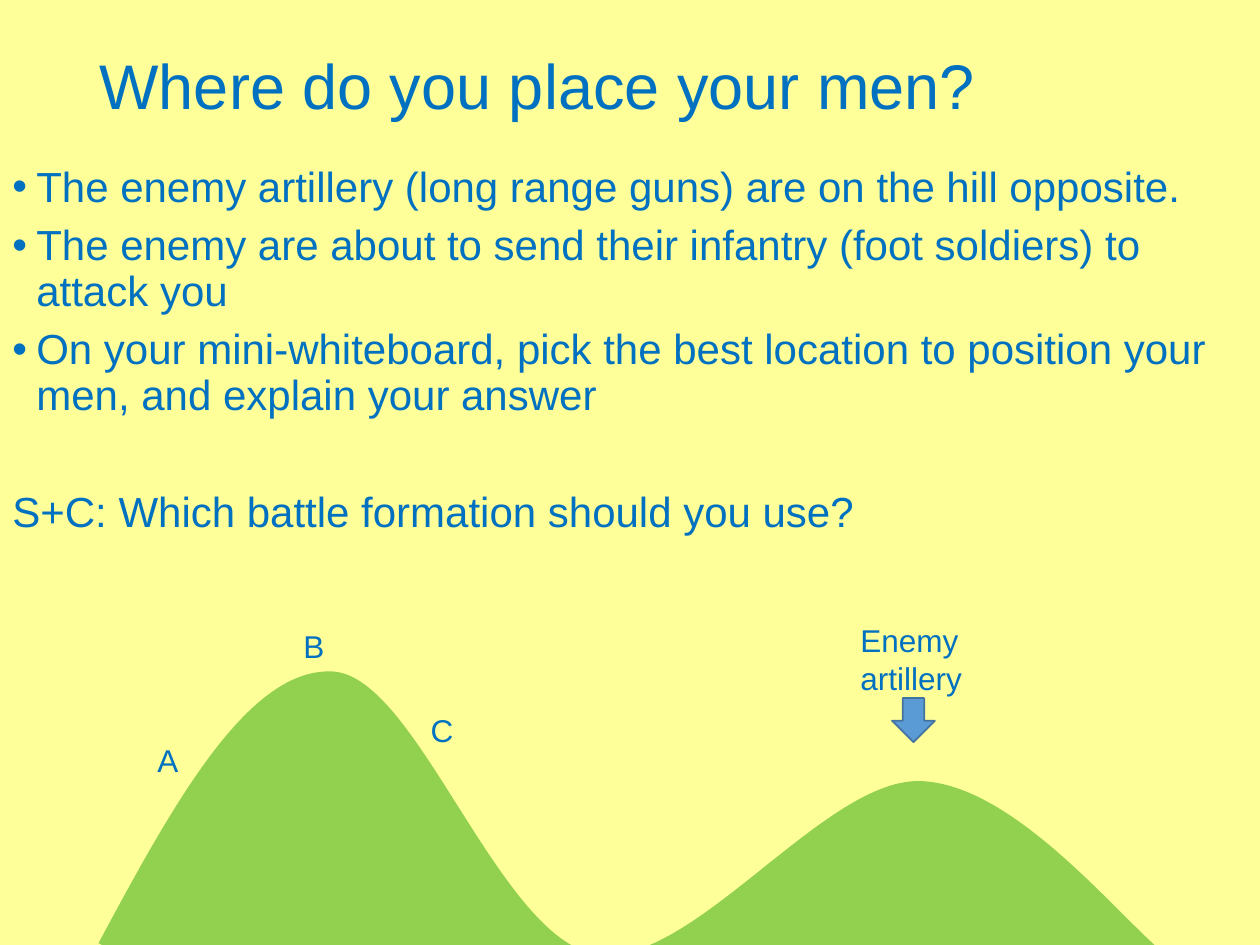
from lxml import etree
from pptx import Presentation
from pptx.dml.color import RGBColor
from pptx.enum import shapes, text
from pptx.oxml.ns import qn
from pptx.util import Inches, Pt

BLUE, GREEN = "0070C0", "92D050"
BULLETS = [
    "The enemy artillery (long range guns) are on the hill opposite.",
    "The enemy are about to send their infantry (foot soldiers) to attack you",
    "On your mini-whiteboard, pick the best location to position your men, and explain your answer",
]
QUESTION = "S+C: Which battle formation should you use?"
HILLS_START = (0.81, 7.5)
# Each curve: two control points, then its end
HILL_CURVES = [
    [(1.39, 6.42), (1.98, 5.34), (2.63, 5.36)],
    [(3.28, 5.38), (3.93, 7.46), (4.71, 7.6)],
    [(5.48, 7.75), (6.53, 6.23), (7.29, 6.23)],
    [(8.05, 6.24), (8.91, 7.37), (9.27, 7.63)],
]
LABELS = [
    ("Enemy artillery", 6.73, 4.88, 1.59, 0.71),
    ("A", 1.15, 5.83, 0.55, 0.4),
    ("B", 2.31, 4.93, 0.55, 0.4),
    ("C", 3.32, 5.59, 0.55, 0.4),
]


def color(value):
    return RGBColor.from_string(value)


def place(shape, left, top, width, height):
    shape.left, shape.top = Inches(left), Inches(top)
    shape.width, shape.height = Inches(width), Inches(height)


def format_text(para, size):
    para.alignment = text.PP_ALIGN.LEFT
    for span in para.runs:
        span.font.name = "Arial"
        span.font.size = Pt(size)
        span.font.color.rgb = color(BLUE)


def paint(shape, fill, line, width):
    shape.shadow.inherit = False
    shape.fill.solid()
    shape.fill.fore_color.rgb = color(fill)
    shape.line.color.rgb = color(line)
    shape.line.width = Pt(width)


def add_box(slide, left, top, width, height):
    box = slide.shapes.add_textbox(Inches(left), Inches(top), Inches(width), Inches(height))
    box.text_frame.word_wrap = True
    return box


def add_bullet(para):
    props = para._p.get_or_add_pPr()
    indent = Inches(0.19)
    props.set("marL", str(indent))
    props.set("indent", str(-indent))
    etree.SubElement(props, qn("a:buFont")).set("typeface", "Arial")
    etree.SubElement(props, qn("a:buChar")).set("char", "•")


def set_title(slide, title):
    box = slide.shapes.title
    place(box, 0.69, -0.02, 8.62, 1.45)
    box.text_frame.text = title
    box.text_frame.vertical_anchor = text.MSO_ANCHOR.MIDDLE
    para = box.text_frame.paragraphs[0]
    para.line_spacing = 0.9
    format_text(para, 36)


def add_body(slide):
    frame = add_box(slide, 0, 1.27, 10, 4.76).text_frame
    frame.text = "\n".join(BULLETS + [QUESTION])
    for para in frame.paragraphs:
        para.line_spacing = 0.9
        para.space_before = Pt(7.5)
        format_text(para, 24)
    for para in frame.paragraphs[:-1]:
        add_bullet(para)
    frame.paragraphs[-1].space_before = Pt(41)


def add_hills(slide):
    """Draw the hills through their control points, then turn each three into a curve."""
    start_x, start_y = HILLS_START
    builder = slide.shapes.build_freeform(Inches(start_x), Inches(start_y))
    points = [(Inches(x), Inches(y)) for curve in HILL_CURVES for x, y in curve]
    builder.add_line_segments(points, close=False)
    hills = builder.convert_to_shape()
    outline = hills._element.find(".//" + qn("a:path"))
    lines = outline.findall(qn("a:lnTo"))
    for first in range(0, len(lines), 3):
        curve = etree.SubElement(outline, qn("a:cubicBezTo"))
        for line in lines[first:first + 3]:
            curve.append(line[0])
            outline.remove(line)
    paint(hills, GREEN, GREEN, 4.5)


def add_arrow(slide):
    arrow = slide.shapes.add_shape(shapes.MSO_SHAPE.DOWN_ARROW, Inches(7.08), Inches(5.54),
                                   Inches(0.34), Inches(0.35))
    paint(arrow, "5B9BD5", "43739E", 1)


def add_label(slide, label, *bounds):
    frame = add_box(slide, *bounds).text_frame
    frame.auto_size = text.MSO_AUTO_SIZE.SHAPE_TO_FIT_TEXT
    frame.text = label
    format_text(frame.paragraphs[0], 18)


def main():
    deck = Presentation()
    deck.slide_width, deck.slide_height = Inches(10), Inches(7.5)
    slide = deck.slides.add_slide(deck.slide_layouts[5])
    slide.background.fill.solid()
    slide.background.fill.fore_color.rgb = color("FFFF99")
    set_title(slide, "Where do you place your men?")
    add_body(slide)
    add_hills(slide)
    add_arrow(slide)
    for label in LABELS:
        add_label(slide, *label)
    deck.save("out.pptx")


if __name__ == "__main__":
    main()
